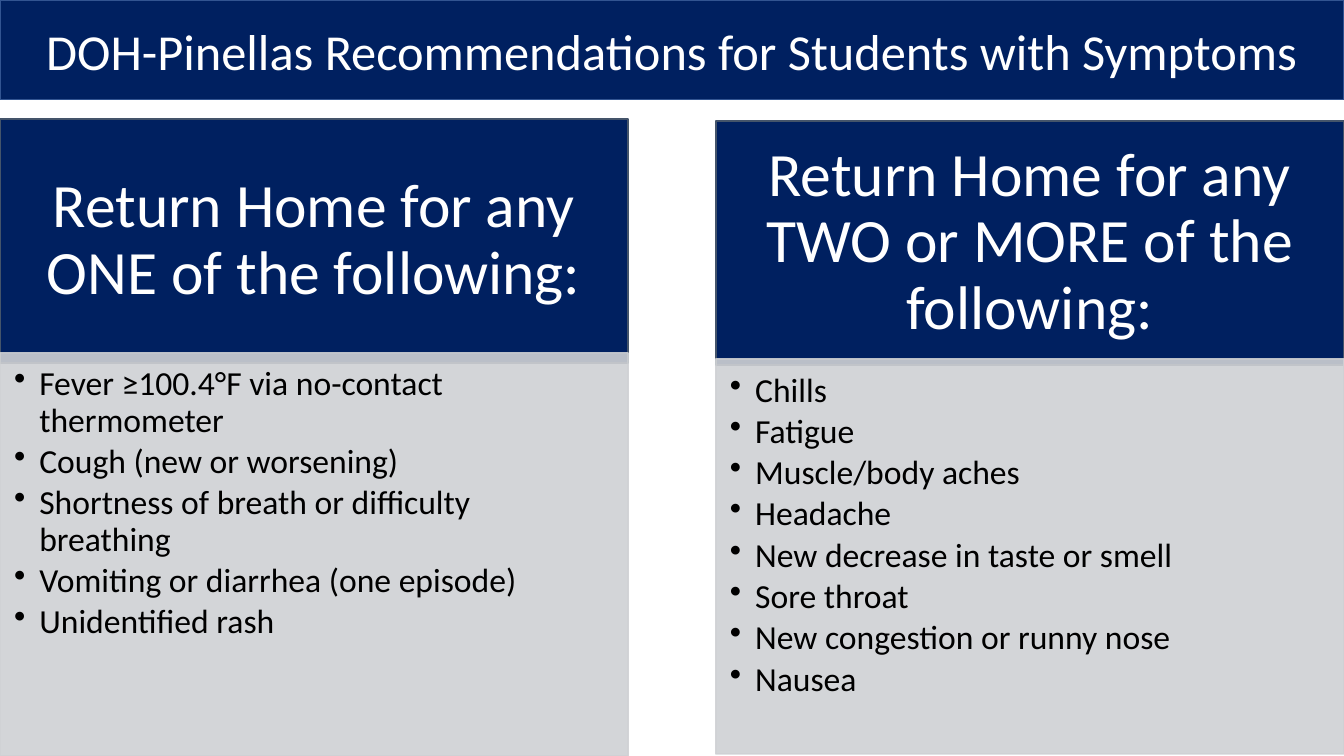
from dataclasses import dataclass

from lxml import etree
from pptx import Presentation
from pptx import util as u
from pptx.dml.color import RGBColor
from pptx.enum import shapes, text
from pptx.oxml.ns import qn
from pptx.shapes.autoshape import Shape
from pptx.slide import Slide

FONT = "Calibri"
NAVY, GREY, WHITE, BLACK = "002060", "CFD1D4", "FFFFFF", "000000"
COLUMN_WIDTH, HEADING_HEIGHT = 6.23, 2.42


@dataclass
class Column:
    left: float
    heading_top: float
    list_top: float
    list_height: float
    heading: str
    symptoms: list[str]


COLUMNS = [
    Column(0, 1.18, 3.5, 4, "Return Home for any ONE of the following:", [
        "Fever ≥100.4°F via no-contact thermometer",
        "Cough (new or worsening)",
        "Shortness of breath or difficulty breathing",
        "Vomiting or diarrhea (one episode)",
        "Unidentified rash",
    ]),
    Column(7.1, 1.2, 3.56, 3.92, "Return Home for any TWO or MORE of the following:", [
        "Chills",
        "Fatigue",
        "Muscle/body aches",
        "Headache",
        "New decrease in taste or smell",
        "Sore throat",
        "New congestion or runny nose",
        "Nausea",
    ]),
]


def rgb(color: str) -> RGBColor:
    return RGBColor.from_string(color)


def add_panel(slide: Slide, box: tuple[float, float, float, float], fill: str,
              line: str, insets: tuple[float, float, float, float]) -> Shape:
    panel = slide.shapes.add_shape(shapes.MSO_SHAPE.RECTANGLE, *map(u.Inches, box))
    panel.shadow.inherit = False
    panel.fill.solid()
    panel.fill.fore_color.rgb = rgb(fill)
    panel.line.color.rgb = rgb(line)
    panel.line.width = u.Pt(1)
    frame = panel.text_frame
    frame.word_wrap = True
    (frame.margin_left, frame.margin_top,
     frame.margin_right, frame.margin_bottom) = map(u.Inches, insets)
    return panel


def write(panel: Shape, lines: list[str], size: int, color: str,
          align: text.PP_ALIGN, spacing: float = 1, after: float = 0) -> None:
    frame = panel.text_frame
    for index, line in enumerate(lines):
        paragraph = frame.add_paragraph() if index else frame.paragraphs[0]
        paragraph.alignment = align
        paragraph.line_spacing = spacing
        paragraph.space_after = u.Pt(after)
        run = paragraph.add_run()
        run.text = line
        run.font.name = FONT
        run.font.size = u.Pt(size)
        run.font.color.rgb = rgb(color)


def add_bullets(panel: Shape) -> None:
    for paragraph in panel.text_frame.paragraphs:
        paragraph.level = 1
        properties = paragraph._p.get_or_add_pPr()
        properties.set("marL", str(u.Inches(0.25)))
        properties.set("indent", str(-u.Inches(0.25)))
        etree.SubElement(properties, qn("a:buChar")).set("char", "•")


def set_opacity(panel: Shape, percent: int) -> None:
    for color in panel._element.spPr.iter(qn("a:srgbClr")):
        etree.SubElement(color, qn("a:alpha")).set("val", str(percent * 1000))


def add_column(slide: Slide, column: Column) -> None:
    # Heading
    heading = add_panel(slide, (column.left, column.heading_top, COLUMN_WIDTH, HEADING_HEIGHT),
                        NAVY, "44546A", (0.34, 0.2, 0.34, 0.2))
    heading.text_frame.vertical_anchor = text.MSO_ANCHOR.MIDDLE
    write(heading, [column.heading], 44, WHITE, text.PP_ALIGN.CENTER, 0.9)

    # Symptom list
    symptoms = add_panel(slide, (column.left, column.list_top, COLUMN_WIDTH, column.list_height),
                         GREY, GREY, (0.14, 0.14, 0.19, 0.21))
    symptoms.text_frame.vertical_anchor = text.MSO_ANCHOR.TOP
    set_opacity(symptoms, 90)
    write(symptoms, column.symptoms, 24, BLACK, text.PP_ALIGN.LEFT, 0.9, 3.6)
    add_bullets(symptoms)


def main() -> None:
    deck = Presentation()
    deck.slide_width, deck.slide_height = u.Inches(13.33), u.Inches(7.5)
    slide = deck.slides.add_slide(deck.slide_layouts[6])

    for column in COLUMNS:
        add_column(slide, column)

    # Title banner
    title = add_panel(slide, (0, 0, 13.33, 0.99), NAVY, "325491", (0.1, 0.05, 0.1, 0.05))
    title.text_frame.vertical_anchor = text.MSO_ANCHOR.MIDDLE
    write(title, ["DOH-Pinellas Recommendations for Students with Symptoms"],
          36, WHITE, text.PP_ALIGN.CENTER)

    deck.save("out.pptx")


if __name__ == "__main__":
    main()
